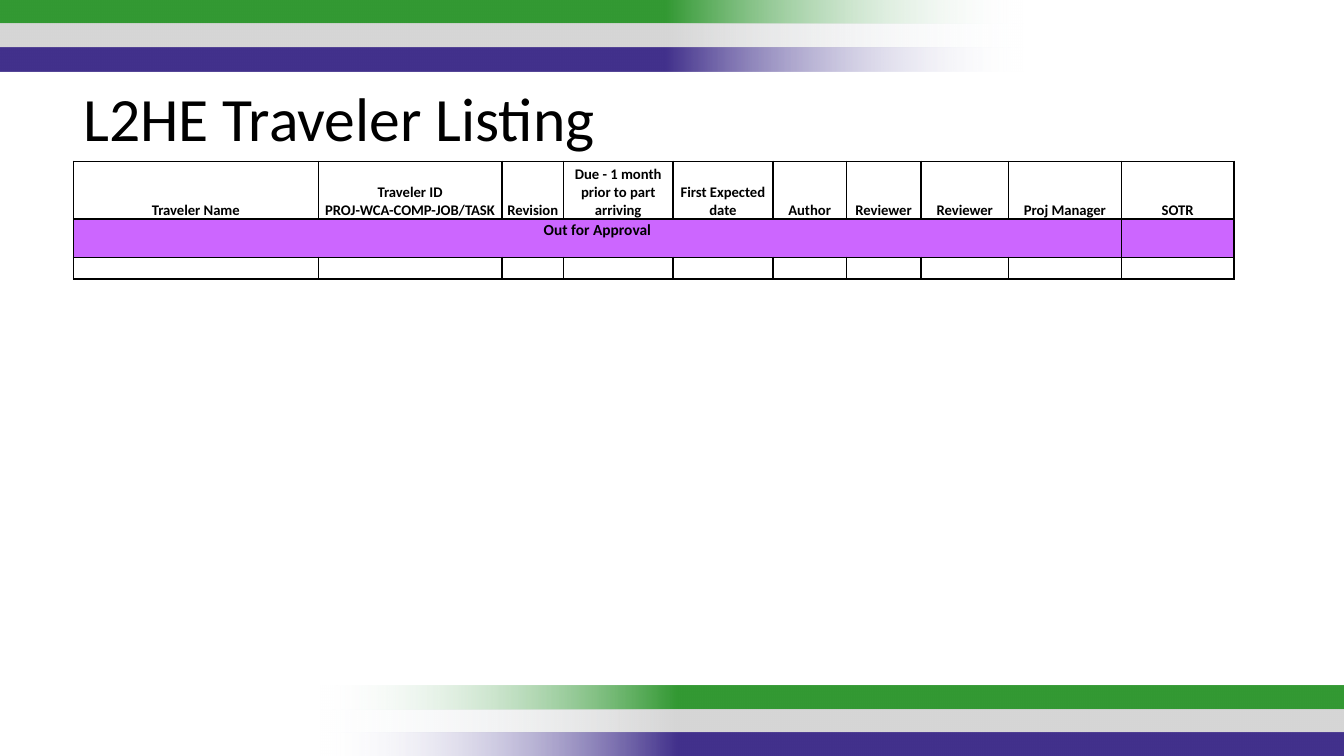
import copy
import dataclasses

import pptx
import pptx.dml.color
import pptx.enum.shapes
import pptx.enum.text
import pptx.oxml
import pptx.oxml.ns
import pptx.util

Cm = pptx.util.Cm
Pt = pptx.util.Pt
RGB = pptx.dml.color.RGBColor.from_string
ANCHOR = pptx.enum.text.MSO_ANCHOR
CENTER = pptx.enum.text.PP_ALIGN.CENTER
NS = pptx.oxml.ns.nsdecls("a")


@dataclasses.dataclass(frozen=True)
class Theme:
    """Colours, font and type sizes of the slide."""
    font: str = "Calibri"
    ink: str = "000000"
    band: str = "CC66FF"
    fade: str = "F7FAFD"
    stripes: tuple = ("339933", "D6D6D6", "42318C")
    title: float = 44
    header: float = 10.5
    section: float = 11


THEME = Theme()

COLUMNS = [
    ("Traveler Name", 6.17),
    ("Traveler ID\vPROJ-WCA-COMP-JOB/TASK", 4.63),
    ("Revision", 1.55),
    ("Due - 1 month prior to part arriving", 2.76),
    ("First Expected date", 2.52),
    ("Author", 1.85),
    ("Reviewer", 1.88),
    ("Reviewer", 2.21),
    ("Proj Manager", 2.84),
    ("SOTR", 2.84),
]
ROW_HEIGHTS = [1.46, 0.96, 0.55]


def set_attrs(obj, values):
    """Set each attribute named in values on obj."""
    for name, value in values.items():
        setattr(obj, name, value)


def format_run(r, size, bold=False):
    """Apply the theme font to a run."""
    set_attrs(r.font, {"name": THEME.font, "size": Pt(size), "bold": bold})
    r.font.color.rgb = RGB(THEME.ink)


def add_stripes(s, left, top, width, height, rotation=0):
    """Stack the three stripes, fading out at one end, in the given box."""
    step = height / len(THEME.stripes)
    for i, color in enumerate(THEME.stripes):
        sp = s.shapes.add_shape(
            pptx.enum.shapes.MSO_SHAPE.RECTANGLE,
            Cm(left), Cm(top + i * step), Cm(width), Cm(step))
        sp.shadow.inherit = False
        sp.rotation = rotation
        sp.line.fill.background()
        sp.fill.gradient()
        sp.fill.gradient_angle = 0
        stops = sp._element.spPr.find(".//" + pptx.oxml.ns.qn("a:gsLst"))
        for old in list(stops):
            stops.remove(old)
        for pos, tint, alpha in ((0, THEME.fade, 0), (35, color, 100), (100, color, 100)):
            stops.append(pptx.oxml.parse_xml(
                f'<a:gs {NS} pos="{pos * 1000}"><a:srgbClr val="{tint}">'
                f'<a:alpha val="{alpha * 1000}"/></a:srgbClr></a:gs>'))


def add_title(s, left, top, width, height, text):
    """Place the slide title in the given box."""
    tf = s.shapes.add_textbox(Cm(left), Cm(top), Cm(width), Cm(height)).text_frame
    tf.word_wrap = True
    r = tf.paragraphs[0].add_run()
    r.text = text
    format_run(r, THEME.title)


def add_borders(cell):
    """Draw a thin line on all four sides of a cell."""
    tcPr = cell._tc.get_or_add_tcPr()
    for i, side in enumerate(("lnL", "lnR", "lnT", "lnB")):
        tcPr.insert(i, pptx.oxml.parse_xml(
            f'<a:{side} {NS} w="12700"><a:solidFill><a:srgbClr val="{THEME.ink}"/>'
            f'</a:solidFill></a:{side}>'))


def fill_cell(cell, text, size, anchor, color=None):
    """Write, fill and frame one table cell."""
    set_attrs(cell, {"margin_left": Cm(0.03), "margin_right": Cm(0.03),
                     "margin_top": Cm(0.03), "margin_bottom": 0,
                     "vertical_anchor": anchor})
    if color:
        cell.fill.solid()
        cell.fill.fore_color.rgb = RGB(color)
    else:
        cell.fill.background()
    add_borders(cell)
    p = cell.text_frame.paragraphs[0]
    p.text = text
    p.alignment = CENTER
    for r in p.runs:
        format_run(r, size, bold=True)
    for br in p._p.findall(pptx.oxml.ns.qn("a:br")):
        br.insert(0, copy.deepcopy(p.runs[0]._r.rPr))
    if not text:
        p._p.append(pptx.oxml.parse_xml(f'<a:endParaRPr {NS} sz="{int(size * 100)}"/>'))


def add_listing(s, left, top):
    """Place the traveler table with its top left corner at the given point."""
    widths = [width for _, width in COLUMNS]
    last = len(COLUMNS) - 1
    tbl = s.shapes.add_table(
        len(ROW_HEIGHTS), len(COLUMNS), Cm(left), Cm(top),
        Cm(sum(widths)), Cm(sum(ROW_HEIGHTS))).table
    set_attrs(tbl, {"first_row": False, "horz_banding": False})
    for row, height in zip(tbl.rows, ROW_HEIGHTS):
        row.height = Cm(height)
    for i, (heading, width) in enumerate(COLUMNS):
        tbl.columns[i].width = Cm(width)
        section = "Out for Approval" if i == 0 else ""
        fill_cell(tbl.cell(0, i), heading, THEME.header, ANCHOR.BOTTOM)
        fill_cell(tbl.cell(1, i), section, THEME.section, ANCHOR.TOP, THEME.band)
        fill_cell(tbl.cell(2, i), "", THEME.header, ANCHOR.BOTTOM)
    tbl.cell(1, 0).merge(tbl.cell(1, last - 1))


def main():
    """Build the slide and save it."""
    prs = pptx.Presentation()
    set_attrs(prs, {"slide_width": Cm(33.87), "slide_height": Cm(19.05)})
    s = prs.slides.add_slide(prs.slide_layouts[6])
    add_stripes(s, -0.03, 0, 25.83, 1.8, rotation=180)
    add_stripes(s, 8.06, 17.27, 25.83, 1.8)
    add_listing(s, 1.85, 4.06)
    add_title(s, 1.85, 1.9, 26.19, 2.14, "L2HE Traveler Listing")
    prs.save("out.pptx")


if __name__ == "__main__":
    main()
